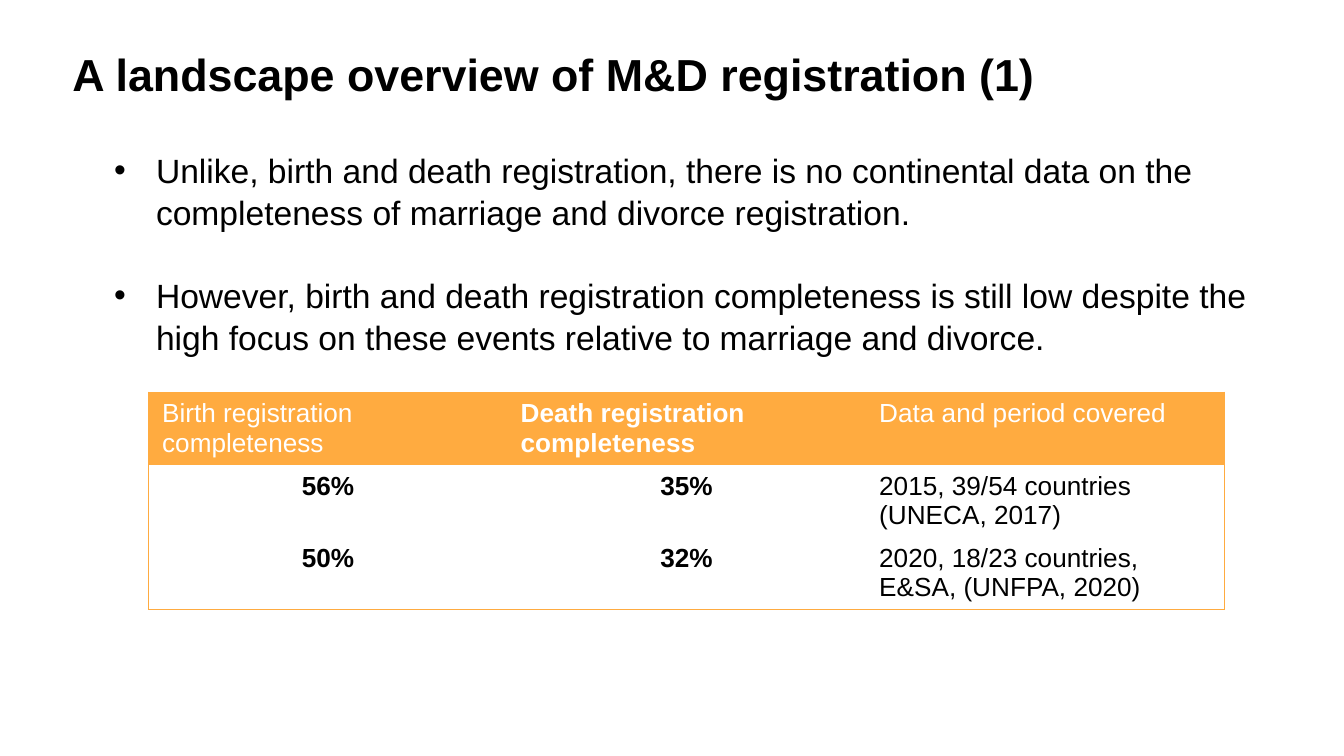
import pptx
import pptx.dml.color
import pptx.enum.text
import pptx.oxml
import pptx.oxml.ns
import pptx.util
from lxml import etree

Cm = pptx.util.Cm
Pt = pptx.util.Pt
BLACK = pptx.dml.color.RGBColor(0x00, 0x00, 0x00)
WHITE = pptx.dml.color.RGBColor(0xFF, 0xFF, 0xFF)
ORANGE = pptx.dml.color.RGBColor(0xFF, 0xAB, 0x40)
ALIGN = pptx.enum.text.PP_ALIGN
ANCHOR = pptx.enum.text.MSO_ANCHOR

TITLE = "A landscape overview of M&D registration (1)"
POINTS = [
    "Unlike, birth and death registration, there is no continental data on the "
    "completeness of marriage and divorce registration.",
    "However, birth and death registration completeness is still low despite the "
    "high focus on these events relative to marriage and divorce.",
]
COMPLETENESS = [
    ["Birth registration completeness", "Death registration completeness",
     "Data and period covered"],
    ["56%", "35%", "2015, 39/54 countries\n(UNECA, 2017)"],
    ["50%", "32%", "2020, 18/23 countries, E&SA, (UNFPA, 2020)"],
]
FRAME_FORMAT = {
    "margin_left": Cm(0.18), "margin_right": Cm(0.18),
    "margin_top": Cm(0.1), "margin_bottom": Cm(0.1),
    "word_wrap": True, "auto_size": pptx.enum.text.MSO_AUTO_SIZE.NONE,
}


def apply_format(target, values):
    for attribute, value in values.items():
        setattr(target, attribute, value)


def format_text(paragraph, size, color, bold=False, alignment=ALIGN.LEFT):
    paragraph.alignment = alignment
    apply_format(paragraph.font, {"name": "Arial", "size": Pt(size), "bold": bold})
    paragraph.font.color.rgb = color


def place_title(slide, left, top, width, height):
    title = slide.shapes.title
    apply_format(title, {"left": left, "top": top, "width": width, "height": height})
    frame = title.text_frame
    apply_format(frame, {**FRAME_FORMAT, "vertical_anchor": ANCHOR.MIDDLE})
    frame.text = TITLE
    frame.paragraphs[0].line_spacing = 0.9
    format_text(frame.paragraphs[0], 24, BLACK, bold=True)


def add_bullet(paragraph):
    properties = paragraph._p.get_or_add_pPr()
    properties.set("marL", str(Cm(1.02)))
    properties.set("indent", str(Cm(-0.79)))
    font = etree.SubElement(properties, pptx.oxml.ns.qn("a:buFont"))
    font.set("typeface", "Arial")
    bullet = etree.SubElement(properties, pptx.oxml.ns.qn("a:buChar"))
    bullet.set("char", "•")


def place_points(slide, left, top, width, height):
    frame = slide.shapes.add_textbox(left, top, width, height).text_frame
    apply_format(frame, FRAME_FORMAT)
    for index, point in enumerate(POINTS):
        paragraph = frame.add_paragraph() if index else frame.paragraphs[0]
        paragraph.text = point
        add_bullet(paragraph)
        paragraph.line_spacing = 1.05
        if index:
            paragraph.space_before = Pt(21.7)
        format_text(paragraph, 18, BLACK)


def set_borders(cell, outer_sides):
    """Draw an orange line on the outer sides and none on the others."""
    properties = cell._tc.get_or_add_tcPr()
    for side in "LRTB":
        line = etree.SubElement(properties, pptx.oxml.ns.qn(f"a:ln{side}"))
        line.set("w", str(Pt(0.75)))
        if side in outer_sides:
            fill = etree.SubElement(line, pptx.oxml.ns.qn("a:solidFill"))
            color = etree.SubElement(fill, pptx.oxml.ns.qn("a:srgbClr"))
            color.set("val", str(ORANGE))
        else:
            etree.SubElement(line, pptx.oxml.ns.qn("a:noFill"))


def place_completeness_table(slide, left, top, width, height):
    row_count, column_count = len(COMPLETENESS), len(COMPLETENESS[0])
    table = slide.shapes.add_table(
        row_count, column_count, left, top, width, height).table
    table.horz_banding = False
    for row, entries in enumerate(COMPLETENESS):
        for column, entry in enumerate(entries):
            cell = table.cell(row, column)
            is_header = row == 0
            is_source = column == column_count - 1
            cell.text = entry
            sides = {"L": column == 0, "R": is_source,
                     "T": row <= 1, "B": row != 1}
            set_borders(cell, [side for side, outer in sides.items() if outer])
            cell.fill.solid()
            cell.fill.fore_color.rgb = ORANGE if is_header else WHITE
            for paragraph in cell.text_frame.paragraphs:
                format_text(
                    paragraph, 14, WHITE if is_header else BLACK,
                    bold=column == 1 if is_header else not is_source,
                    alignment=ALIGN.LEFT if is_header or is_source else ALIGN.CENTER)


def main():
    presentation = pptx.Presentation()
    presentation.slide_width, presentation.slide_height = Cm(25.4), Cm(14.28)
    slide = presentation.slides.add_slide(presentation.slide_layouts[5])
    place_points(slide, Cm(1.75), Cm(2.69), Cm(22.76), Cm(11.07))
    place_title(slide, Cm(1.19), Cm(0.91), Cm(23.88), Cm(1.09))
    place_completeness_table(slide, Cm(2.81), Cm(7.41), Cm(20.33), Cm(4.1))
    presentation.save("out.pptx")


if __name__ == "__main__":
    main()
